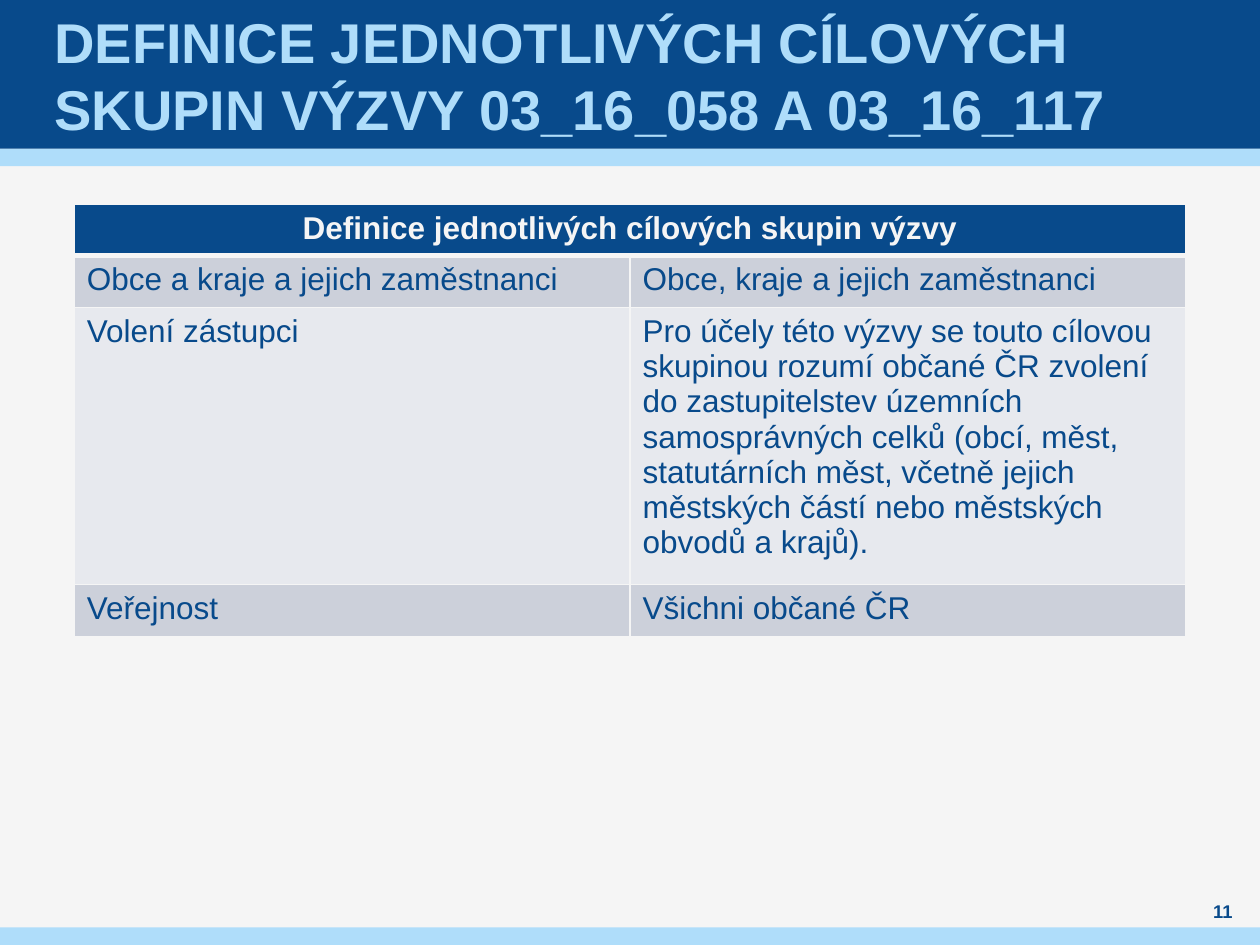
import pptx
import pptx.util
import pptx.dml.color
import pptx.enum.shapes
import pptx.enum.text
import pptx.oxml
import pptx.oxml.ns

Inches = pptx.util.Inches
Pt = pptx.util.Pt
ALIGN = pptx.enum.text.PP_ALIGN
MIDDLE = pptx.enum.text.MSO_ANCHOR.MIDDLE

COLORS = {
    "back": "F5F5F5",
    "navy": "084A8B",
    "sky": "AFDDFA",
    "dark": "CCD0DA",
    "light": "E7E9EE",
}

TITLE = "DEFINICE JEDNOTLIVÝCH CÍLOVÝCH SKUPIN VÝZVY 03_16_058 A 03_16_117"
HEAD = "Definice jednotlivých cílových skupin výzvy"
GROUPS = [
    ("Obce a kraje a jejich zaměstnanci", "Obce, kraje a jejich zaměstnanci"),
    ("Volení zástupci",
     "Pro účely této výzvy se touto cílovou skupinou rozumí občané ČR "
     "zvolení do zastupitelstev územních samosprávných celků (obcí, měst, "
     "statutárních měst, včetně jejich městských částí nebo městských "
     "obvodů a krajů)."),
    ("Veřejnost", "Všichni občané ČR"),
]


def color(name):
    return pptx.dml.color.RGBColor.from_string(COLORS[name])


def paint(item, name):
    item.fill.solid()
    item.fill.fore_color.rgb = color(name)


def style(par, size, name, bold=False, align=ALIGN.LEFT):
    par.alignment = align
    par.font.name = "Arial"
    par.font.size = Pt(size)
    par.font.bold = bold
    par.font.color.rgb = color(name)


def add_band(slide, top, height, name):
    band = slide.shapes.add_shape(
        pptx.enum.shapes.MSO_SHAPE.RECTANGLE,
        0, Inches(top), Inches(10), Inches(height))
    band.shadow.inherit = False
    paint(band, name)
    band.line.fill.background()


def add_text(slide, box, text, size, name, align=ALIGN.LEFT, side=0):
    frame = slide.shapes.add_textbox(*map(Inches, box)).text_frame
    frame.word_wrap = True
    frame.vertical_anchor = MIDDLE
    frame.margin_left = frame.margin_right = Inches(side)
    frame.margin_top = frame.margin_bottom = 0
    frame.text = text
    style(frame.paragraphs[0], size, name, True, align)


def add_edges(cell, top, bottom):
    widths = {"lnL": 1, "lnR": 1, "lnT": top, "lnB": bottom}
    props = cell._tc.get_or_add_tcPr()
    for place, (tag, width) in enumerate(widths.items()):
        props.insert(place, pptx.oxml.parse_xml(
            f'<a:{tag} {pptx.oxml.ns.nsdecls("a")} w="{Pt(width)}">'
            f'<a:solidFill><a:srgbClr val="{COLORS["back"]}"/></a:solidFill>'
            f'</a:{tag}>'))


def add_groups(slide):
    rows = [(HEAD, "")] + GROUPS
    heights = [0.41, 0.41, 2.06, 0.41]
    table = slide.shapes.add_table(
        len(rows), 2, Inches(0.59), Inches(1.62),
        Inches(8.82), Inches(sum(heights))).table
    for r, texts in enumerate(rows):
        table.rows[r].height = Inches(heights[r])
        for c, text in enumerate(texts):
            cell = table.cell(r, c)
            cell.text = text
            par = cell.text_frame.paragraphs[0]
            if r == 0:
                paint(cell, "navy")
                style(par, 18, "back", True, ALIGN.CENTER)
            else:
                paint(cell, "dark" if r % 2 else "light")
                style(par, 18, "navy")
            # A thicker rule parts the heading from the body
            add_edges(cell, 3 if r == 1 else 1, 3 if r == 0 else 1)
    table.cell(0, 0).merge(table.cell(0, 1))


def main():
    deck = pptx.Presentation()
    deck.slide_width, deck.slide_height = Inches(10), Inches(7.5)
    slide = deck.slides.add_slide(deck.slide_layouts[6])
    paint(slide.background, "back")

    # Header and footer bands
    add_band(slide, 1.18, 0.14, "sky")
    add_band(slide, 0, 1.18, "navy")
    add_band(slide, 7.36, 0.14, "sky")

    # Title, table and page number
    add_text(slide, (0.39, 0, 9.21, 1.18), TITLE, 32, "sky", side=0.04)
    add_groups(slide)
    add_text(slide, (9.45, 7.13, 0.51, 0.2), "11", 10.5, "navy", ALIGN.CENTER)
    deck.save("out.pptx")


if __name__ == "__main__":
    main()
